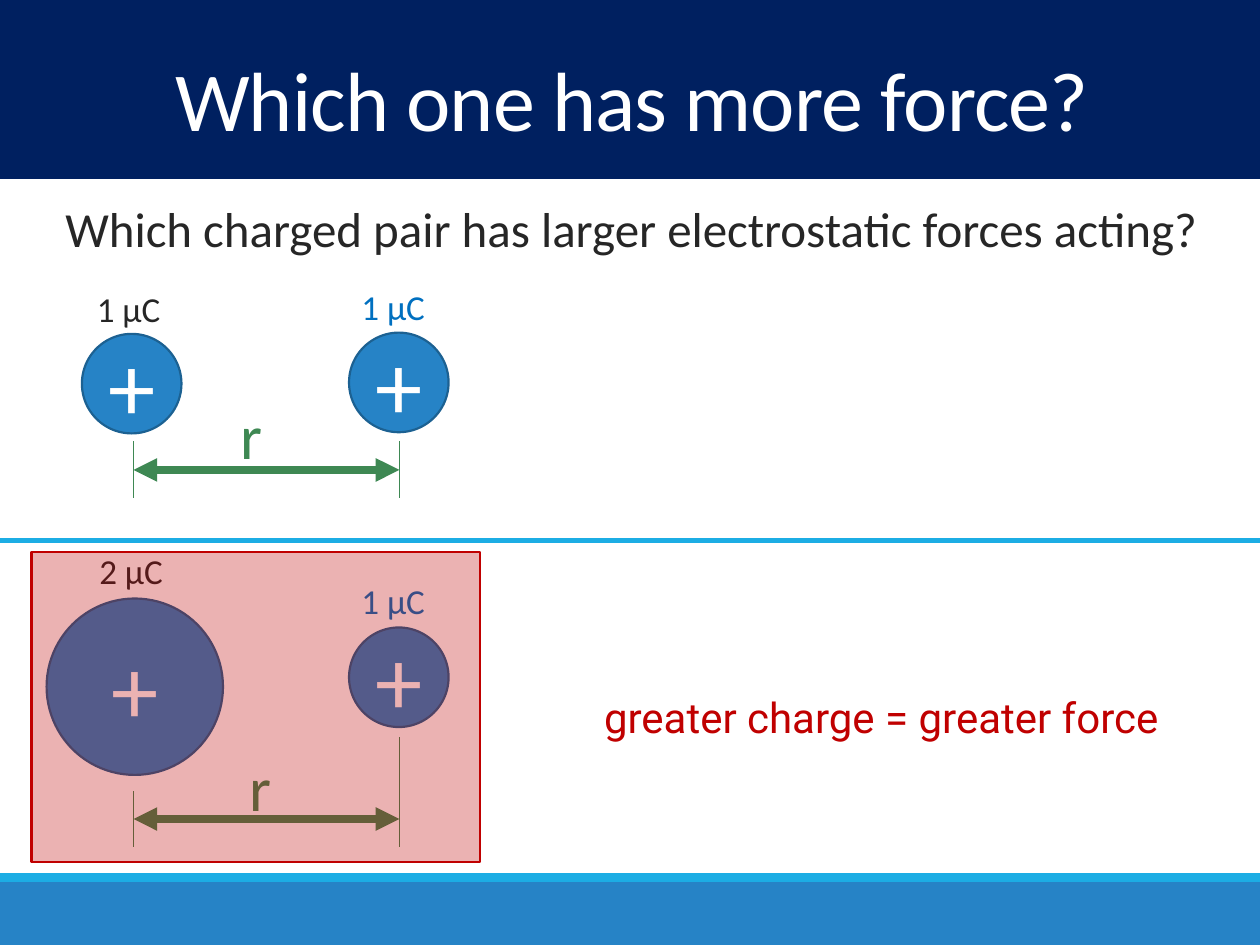
"""Build a slide comparing the electrostatic force of two charged pairs."""
from typing import NamedTuple

from lxml import etree
from pptx import Presentation
from pptx import util as u
from pptx.dml.color import RGBColor
from pptx.enum import shapes, text
from pptx.oxml.ns import qn

SLIDE_W, SLIDE_H = u.Inches(10), u.Inches(7.5)
NAVY = RGBColor(0x00, 0x20, 0x60)
BLUE = RGBColor(0x26, 0x83, 0xC6)
DARK_BLUE = RGBColor(0x1C, 0x61, 0x92)
SKY = RGBColor(0x1C, 0xAD, 0xE4)
LABEL_BLUE = RGBColor(0x00, 0x70, 0xC0)
GREEN = RGBColor(0x3E, 0x88, 0x53)
RED = RGBColor(0xC0, 0x00, 0x00)
INK = RGBColor(0x26, 0x26, 0x26)
WHITE = RGBColor(0xFF, 0xFF, 0xFF)
LEFT_TICK, RIGHT_TICK = 10.6, 31.7


class Area(NamedTuple):
    """An area in percent of the slide's width and height."""
    left: float
    top: float
    width: float
    height: float


class Charge(NamedTuple):
    """A charge: its centre, diameter (percent of width) and label."""
    x: float
    y: float
    diameter: float
    amount: str
    label_left: float
    label_top: float
    label_color: RGBColor


class Distance(NamedTuple):
    """The measured distance r, with the top of each tick."""
    y: float
    left_top: float
    right_top: float
    bottom: float
    r_left: float
    r_top: float


class Pair(NamedTuple):
    """Two charges and the distance between them."""
    charges: tuple[Charge, ...]
    distance: Distance


PAIRS = (
    Pair((Charge(31.65, 40.47, 7.9, "1 µC", 27.7, 29.6, LABEL_BLUE),
          Charge(10.45, 40.6, 7.9, "1 µC", 6.7, 29.73, INK)),
         Distance(49.73, 46.67, 46.67, 52.67, 18.1, 41.33)),
    Pair((Charge(31.65, 71.67, 7.9, "1 µC", 27.7, 60.67, LABEL_BLUE),
          Charge(10.7, 72.67, 14, "2 µC", 6.9, 57.47, INK)),
         Distance(86.67, 83.73, 78, 89.6, 18.8, 78.53)),
)


def across(percent: float) -> int:
    """Convert a share of the slide's width to a length."""
    return round(SLIDE_W * percent / 100)


def down(percent: float) -> int:
    """Convert a share of the slide's height to a length."""
    return round(SLIDE_H * percent / 100)


def place(area: Area) -> tuple[int, int, int, int]:
    """Return left, top, width and height as lengths."""
    return across(area.left), down(area.top), across(area.width), down(area.height)


def write(frame, words: str, size: float, color: RGBColor, face: str = "Calibri",
          align=text.PP_ALIGN.LEFT):
    """Put one formatted paragraph into a text frame and return it."""
    paragraph = frame.paragraphs[0]
    paragraph.text = words
    paragraph.alignment = align
    font = paragraph.font
    font.size, font.name, font.color.rgb = u.Pt(size), face, color
    return paragraph


def add_words(slide, area: Area, words: str, size: float, color: RGBColor,
              face: str = "Calibri", align=text.PP_ALIGN.LEFT, wrap: bool = False) -> None:
    """Add a text box that grows with its text."""
    frame = slide.shapes.add_textbox(*place(area)).text_frame
    frame.word_wrap = wrap
    frame.auto_size = text.MSO_AUTO_SIZE.SHAPE_TO_FIT_TEXT
    write(frame, words, size, color, face, align)


def add_block(slide, area: Area, fill: RGBColor, outline: RGBColor | None = None,
              kind=shapes.MSO_SHAPE.RECTANGLE):
    """Add a filled shape, outlined when an outline colour is given."""
    block = slide.shapes.add_shape(kind, *place(area))
    block.shadow.inherit = False
    block.fill.solid()
    block.fill.fore_color.rgb = fill
    if outline is None:
        block.line.fill.background()
    else:
        block.line.color.rgb = outline
        block.line.width = u.Pt(1.25)
    return block


def add_line(slide, x1: float, y1: float, x2: float, y2: float, color: RGBColor,
             width: float, arrows: bool = False) -> None:
    """Add a straight line, with arrowheads at both ends if wanted."""
    line = slide.shapes.add_connector(
        shapes.MSO_CONNECTOR.STRAIGHT, across(x1), down(y1), across(x2), down(y2))
    line.line.color.rgb = color
    line.line.width = u.Pt(width)
    properties = line.element.spPr
    if arrows:
        for end in ("a:headEnd", "a:tailEnd"):
            etree.SubElement(properties.find(qn("a:ln")), qn(end), type="triangle")
    etree.SubElement(properties, qn("a:effectLst"))


def add_charge(slide, charge: Charge) -> None:
    """Draw a positive charge and its amount."""
    height = charge.diameter * SLIDE_W / SLIDE_H
    area = Area(charge.x - charge.diameter / 2, charge.y - height / 2,
                charge.diameter, height)
    ball = add_block(slide, area, BLUE, DARK_BLUE, shapes.MSO_SHAPE.OVAL)
    ball.text_frame.vertical_anchor = text.MSO_ANCHOR.MIDDLE
    write(ball.text_frame, "+", 54, WHITE, align=text.PP_ALIGN.CENTER)
    add_words(slide, Area(charge.label_left, charge.label_top, 7.7, 5.87),
              charge.amount, 20, charge.label_color)


def add_distance(slide, distance: Distance) -> None:
    """Draw the double arrow, its end ticks and the letter r."""
    add_line(slide, LEFT_TICK, distance.y, RIGHT_TICK, distance.y, GREEN, 4.5, True)
    for x, top in ((LEFT_TICK, distance.left_top), (RIGHT_TICK, distance.right_top)):
        add_line(slide, x, top, x, distance.bottom, GREEN, 1)
    add_words(slide, Area(distance.r_left, distance.r_top, 3.8, 9.47), "r", 36, GREEN)


def add_title(slide, words: str) -> None:
    """Format the title placeholder and bring it in front of its band."""
    title = slide.shapes.title
    title.left, title.top, title.width, title.height = place(Area(0.3, 5.6, 99.7, 11.2))
    frame = title.text_frame
    frame.word_wrap = True
    frame.auto_size = text.MSO_AUTO_SIZE.NONE
    frame.vertical_anchor = text.MSO_ANCHOR.MIDDLE
    paragraph = write(frame, words, 48, WHITE, align=text.PP_ALIGN.CENTER)
    paragraph.line_spacing = 0.85
    paragraph.runs[0].font.bold = False
    paragraph.runs[0].font.element.set("spc", "-50") if hasattr(
        paragraph.runs[0].font, "element") else paragraph.runs[0]._r.get_or_add_rPr().set("spc", "-50")
    title.element.getparent().append(title.element)


def main() -> None:
    """Build and save the slide."""
    deck = Presentation()
    deck.slide_width, deck.slide_height = SLIDE_W, SLIDE_H
    slide = deck.slides.add_slide(deck.slide_layouts[5])
    add_block(slide, Area(0, 93.33, 100, 6.67), BLUE)
    add_block(slide, Area(0, 92.4, 100, 0.93), SKY)
    add_block(slide, Area(0, 0, 100, 18.93), NAVY)
    add_line(slide, 0, 57.2, 100, 57.2, SKY, 3)
    add_title(slide, "Which one has more force?")
    add_words(slide, Area(4.2, 20.4, 92.8, 7.6),
              "Which charged pair has larger electrostatic forces acting?", 28, INK, wrap=True)
    for pair in PAIRS:
        for charge in pair.charges:
            add_charge(slide, charge)
        add_distance(slide, pair.distance)
    highlight = add_block(slide, Area(2.5, 58.4, 35.6, 32.8), RED, RED)
    tint = highlight.element.spPr.find(qn("a:solidFill"))[0]
    etree.SubElement(tint, qn("a:alpha"), val="30000")
    add_words(slide, Area(41.6, 72.53, 56.7, 6.67), "greater charge = greater force",
              24, RED, "Roboto", text.PP_ALIGN.CENTER, True)
    deck.save("out.pptx")


if __name__ == "__main__":
    main()
